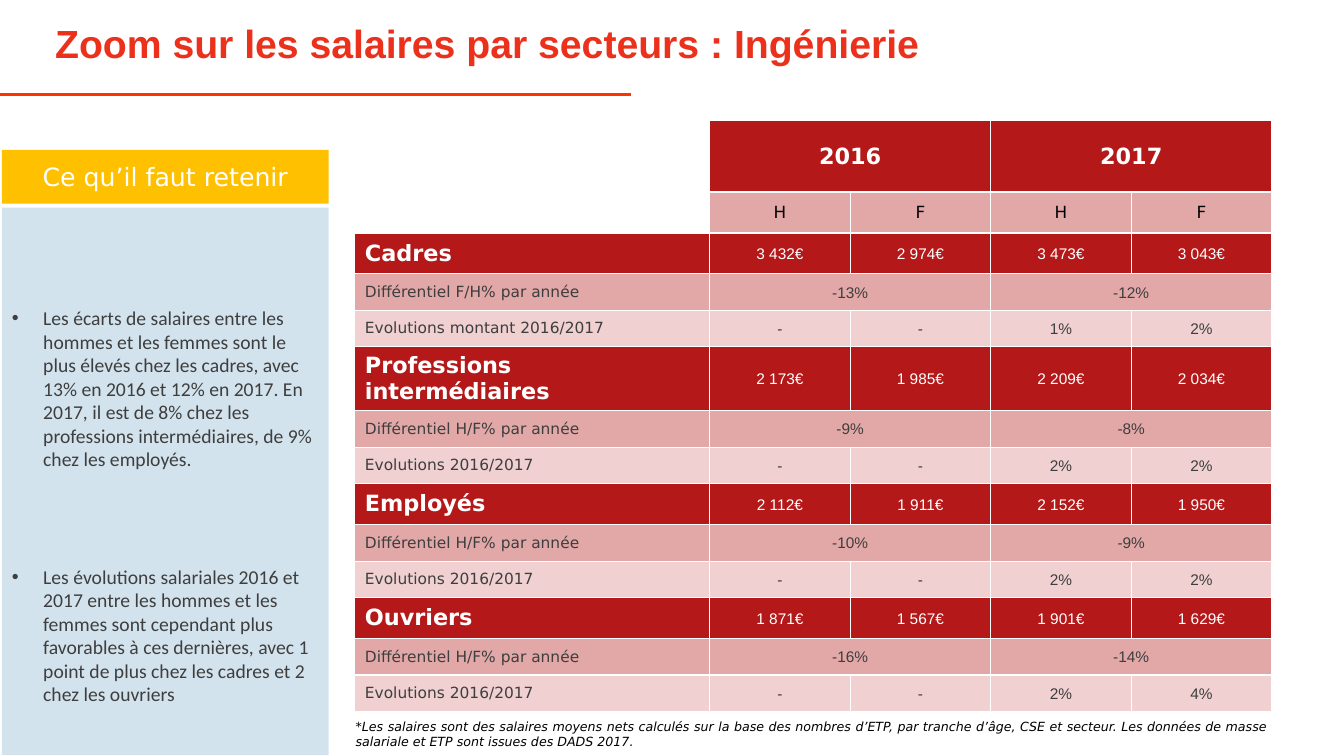
from lxml import etree
from pptx import Presentation
from pptx.dml.color import RGBColor
from pptx.enum.shapes import MSO_CONNECTOR, MSO_SHAPE
from pptx.enum.text import MSO_ANCHOR, PP_ALIGN
from pptx.oxml.ns import qn
from pptx.util import Cm, Pt

STRAIGHT = MSO_CONNECTOR.STRAIGHT
RECTANGLE = MSO_SHAPE.RECTANGLE
MIDDLE, TOP = MSO_ANCHOR.MIDDLE, MSO_ANCHOR.TOP
LEFT, CENTER, JUSTIFY = PP_ALIGN.LEFT, PP_ALIGN.CENTER, PP_ALIGN.JUSTIFY

RED, WHITE, BLACK, GREY = "B41819", "FFFFFF", "000000", "3E3E3E"
SANS = "DejaVu Sans"


def paint(fill, properties, color, opacity=100):
    """Fill solidly; properties is the XML element that holds the fill."""
    fill.solid()
    fill.fore_color.rgb = RGBColor.from_string(color)
    if opacity < 100:
        color_element = next(properties.iter(qn("a:srgbClr")))
        etree.SubElement(color_element, qn("a:alpha")).set("val", str(opacity * 1000))


def format_paragraph(paragraph, font_name, size, color, align=LEFT, bold=False, italic=False):
    paragraph.alignment = align
    for run in paragraph.runs:
        run.font.name = font_name
        run.font.size = Pt(size)
        run.font.bold = bold
        run.font.italic = italic
        run.font.color.rgb = RGBColor.from_string(color)


presentation = Presentation()
presentation.slide_width = Cm(33.86)
presentation.slide_height = Cm(19.05)
slide = presentation.slides.add_slide(presentation.slide_layouts[6])

# Title and rule
rule = slide.shapes.add_connector(STRAIGHT, Cm(0), Cm(2.38), Cm(15.9), Cm(2.38))
rule.line.color.rgb = RGBColor.from_string("FF3300")
rule.line.width = Pt(1.5)
etree.SubElement(rule._element.spPr, qn("a:effectLst"))

title = slide.shapes.add_textbox(Cm(1.14), Cm(0.23), Cm(31.72), Cm(1.85))
title.text_frame.word_wrap = True
title.text_frame.vertical_anchor = MIDDLE
title.text_frame.text = "Zoom sur les salaires par secteurs : Ingénierie"
title_paragraph = title.text_frame.paragraphs[0]
title_paragraph.line_spacing = 0.9
format_paragraph(title_paragraph, "Arial", 28, "EB311B", bold=True)
title_fill = title_paragraph.runs[0].font.fill
title_fill.gradient()
title_fill.gradient_angle = 0
for stop, color in zip(title_fill.gradient_stops, ("EB311B", "FF6600")):
    stop.color.rgb = RGBColor.from_string(color)

# Key points on the left
heading = slide.shapes.add_shape(RECTANGLE, Cm(0.05), Cm(3.78), Cm(8.23), Cm(1.35))
panel = slide.shapes.add_shape(RECTANGLE, Cm(0.05), Cm(5.23), Cm(8.23), Cm(13.8))
for shape, color, opacity in ((heading, "FFC000", 100), (panel, "2373A5", 20)):
    shape.shadow.inherit = False
    shape.line.fill.background()
    paint(shape.fill, shape._element.spPr, color, opacity)

heading.text_frame.text = "Ce qu’il faut retenir"
heading.text_frame.vertical_anchor = MIDDLE
format_paragraph(heading.text_frame.paragraphs[0], SANS, 18, WHITE, CENTER)

key_points = (
    "Les écarts de salaires entre les hommes et les femmes sont le plus élevés chez les cadres, "
    "avec 13% en 2016 et 12% en 2017. En 2017, il est de 8% chez les professions intermédiaires, "
    "de 9% chez les employés.",
    "Les évolutions salariales 2016 et 2017 entre les hommes et les femmes sont cependant plus "
    "favorables à ces dernières, avec 1 point de plus chez les cadres et 2 chez les ouvriers",
)
panel.text_frame.text = "\n".join(key_points)
panel.text_frame.vertical_anchor = TOP
panel.text_frame.margin_top = Cm(2.48)
for paragraph in panel.text_frame.paragraphs:
    format_paragraph(paragraph, "Calibri", 14, GREY)
    properties = paragraph._p.get_or_add_pPr()
    properties.set("marL", str(Cm(0.79)))
    properties.set("indent", str(-Cm(0.79)))
    etree.SubElement(properties, qn("a:buFont")).set("typeface", "Arial")
    etree.SubElement(properties, qn("a:buChar")).set("char", "•")
panel.text_frame.paragraphs[1].space_before = Pt(67)

# Salary table: kind, cell texts (None continues the cell to its left)
table_rows = [
    ("years", ("", "2016", None, "2017", None)),
    ("sexes", ("", "H", "F", "H", "F")),
]
categories = (
    ("Cadres", ("3 432€", "2 974€", "3 473€", "3 043€"),
     "Différentiel F/H% par année", ("-13%", "-12%"), "Evolutions montant 2016/2017", ("1%", "2%")),
    ("Professions intermédiaires", ("2 173€", "1 985€", "2 209€", "2 034€"),
     "Différentiel H/F% par année", ("-9%", "-8%"), "Evolutions 2016/2017", ("2%", "2%")),
    ("Employés", ("2 112€", "1 911€", "2 152€", "1 950€"),
     "Différentiel H/F% par année", ("-10%", "-9%"), "Evolutions 2016/2017", ("2%", "2%")),
    ("Ouvriers", ("1 871€", "1 567€", "1 901€", "1 629€"),
     "Différentiel H/F% par année", ("-16%", "-14%"), "Evolutions 2016/2017", ("2%", "4%")),
)
for name, salaries, gap_label, (gap_2016, gap_2017), change_label, changes in categories:
    table_rows += [
        ("salaries", (name, *salaries)),
        ("gap", (gap_label, gap_2016, None, gap_2017, None)),
        ("change", (change_label, "-", "-", *changes)),
    ]

# kind: row height in cm, fill opacity, value font, size, colour, bold
row_styles = {
    "years": (1.8, 100, SANS, 16, WHITE, True),
    "sexes": (1.03, 38, SANS, 12, BLACK, False),
    "salaries": (1.03, 100, "Arial", 11, WHITE, False),
    "gap": (0.92, 38, "Arial", 11, GREY, False),
    "change": (0.92, 20, "Arial", 11, GREY, False),
}

frame = slide.shapes.add_table(len(table_rows), 5, Cm(8.94), Cm(3.04), Cm(23), Cm(14.88))
table = frame.table
table.horz_banding = False
for column, width in zip(table.columns, (8.94, 3.54, 3.54, 3.54, 3.54)):
    column.width = Cm(width)

for row_index, (kind, texts) in enumerate(table_rows):
    height, opacity, font_name, size, color, bold = row_styles[kind]
    two_lines = texts[0] == "Professions intermédiaires"
    table.rows[row_index].height = Cm(1.6 if two_lines else height)
    for column_index, text in enumerate(texts):
        cell = table.cell(row_index, column_index)
        if text is None:
            table.cell(row_index, column_index - 1).merge(cell)
            continue
        cell.vertical_anchor = MIDDLE
        if text == "":
            cell.fill.background()
            continue
        paint(cell.fill, cell._tc.tcPr, RED, opacity)
        cell.text_frame.text = text
        paragraph = cell.text_frame.paragraphs[0]
        if column_index == 0:
            is_category = kind == "salaries"
            format_paragraph(paragraph, SANS, 16 if is_category else 11, color, bold=is_category)
            continue
        format_paragraph(paragraph, font_name, size, color, CENTER, bold)
        if kind != "sexes":
            cell.margin_left = cell.margin_right = cell.margin_top = Cm(0.03)
            cell.margin_bottom = Cm(0)

# Footnote
footnote = slide.shapes.add_textbox(Cm(8.71), Cm(17.98), Cm(23.44), Cm(1.02))
footnote.text_frame.word_wrap = True
footnote.text_frame.text = (
    "*Les salaires sont des salaires moyens nets calculés sur la base des nombres d’ETP, par tranche "
    "d’âge, CSE et secteur. Les données de masse salariale et ETP sont issues des DADS 2017."
)
format_paragraph(footnote.text_frame.paragraphs[0], SANS, 9, BLACK, JUSTIFY, italic=True)

presentation.save("out.pptx")
